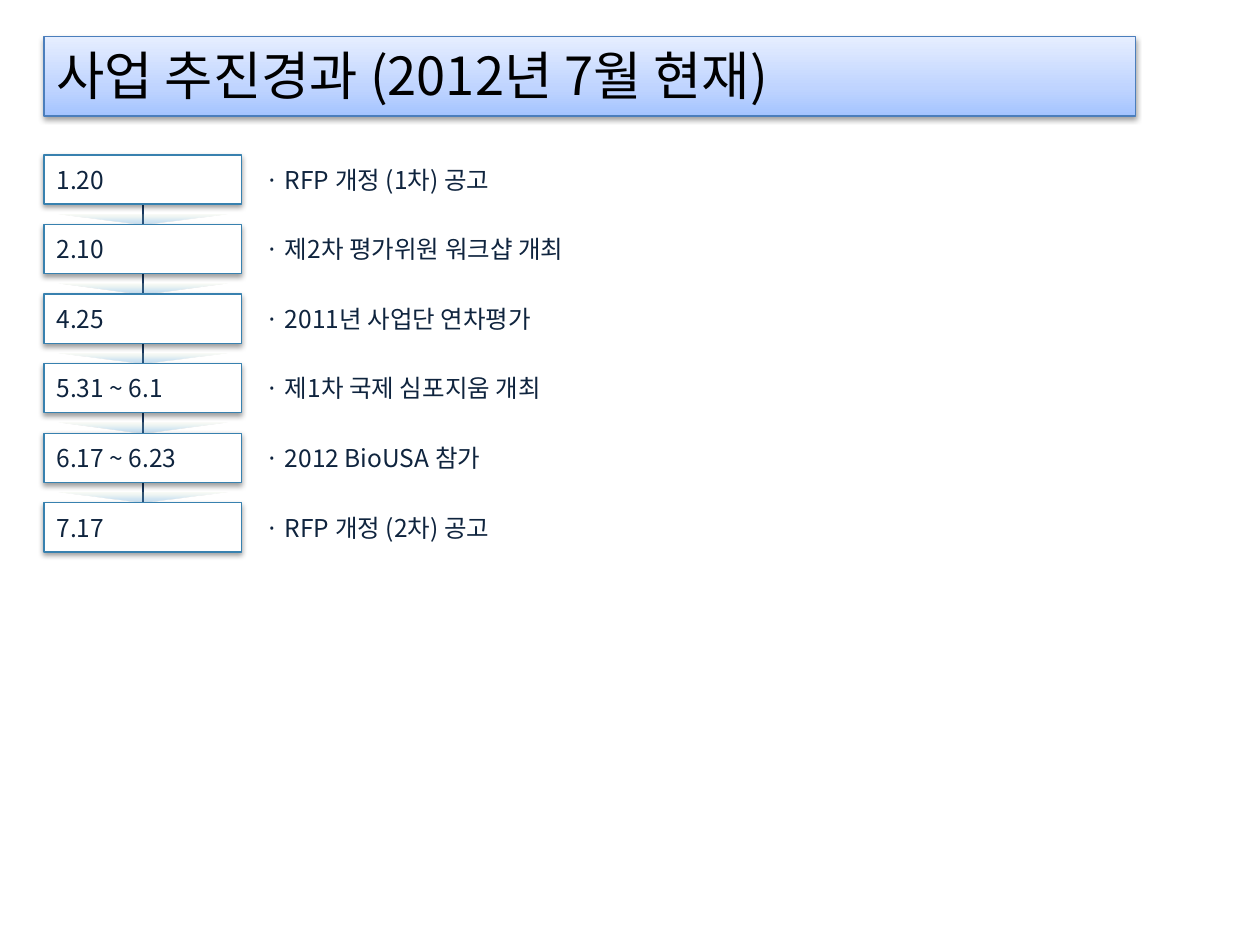
from typing import NamedTuple

import lxml.etree
import pptx
import pptx.dml.color
import pptx.enum.shapes
import pptx.enum.text
import pptx.oxml
import pptx.oxml.ns
import pptx.util

Inches = pptx.util.Inches
Shape = pptx.enum.shapes.MSO_SHAPE
Anchor = pptx.enum.text.MSO_ANCHOR
qn = pptx.oxml.ns.qn

FONT = "Noto Sans CJK KR"
COLORS = {
    "title": "000000",
    "text": "0F243E",
    "box": "FFFFFF",
    "box_line": "3881AF",
    "title_line": "4B7EBC",
    "spine": "17375E",
    "shadow": "000000",
}


class Stop(NamedTuple):
    pos: int
    color: str
    alpha: int = 100


class Step(NamedTuple):
    date: str
    event: str


TITLE_STOPS = [Stop(0, "A4C4FF"), Stop(35, "BFD4FF"), Stop(100, "E6EEFF")]
ARROW_STOPS = [Stop(38, "5EA6D3", 29), Stop(100, "D7E4BD", 14)]

STEPS = [
    Step("1.20", "· RFP 개정 (1차) 공고"),
    Step("2.10", "· 제2차 평가위원 워크샵 개최"),
    Step("4.25", "· 2011년 사업단 연차평가"),
    Step("5.31 ~ 6.1", "· 제1차 국제 심포지움 개최"),
    Step("6.17 ~ 6.23", "· 2012 BioUSA 참가"),
    Step("7.17", "· RFP 개정 (2차) 공고"),
]

# Timeline grid, in inches
LEFT, TOP, BOX_W, BOX_H = 0.35, 1.23, 1.57, 0.39
LAST_TOP = 3.99
PITCH = (LAST_TOP - TOP) / (len(STEPS) - 1)
CENTER = LEFT + BOX_W / 2
ARROW_W, ARROW_H = 1.34, 0.08
EVENT_LEFT, EVENT_W = 2.01, 7.56


def rgb(name: str) -> pptx.dml.color.RGBColor:
    return pptx.dml.color.RGBColor.from_string(COLORS[name])


def set_line(s, color: str) -> None:
    s.line.color.rgb = rgb(color)
    s.line.width = pptx.util.Pt(0.75)


def add_color(parent, color: str, alpha: int) -> None:
    clr = lxml.etree.SubElement(parent, qn("a:srgbClr"), val=color)
    if alpha < 100:
        lxml.etree.SubElement(clr, qn("a:alpha"), val=str(alpha * 1000))


def set_gradient(s, stops: list[Stop]) -> None:
    """Fill with a gradient that runs from bottom to top."""
    s.fill.background()
    ns = pptx.oxml.ns.nsdecls("a")
    grad = pptx.oxml.parse_xml(f'<a:gradFill {ns} rotWithShape="1"/>')
    gs_list = lxml.etree.SubElement(grad, qn("a:gsLst"))
    for stop in stops:
        gs = lxml.etree.SubElement(gs_list, qn("a:gs"), pos=str(stop.pos * 1000))
        add_color(gs, stop.color, stop.alpha)
    lxml.etree.SubElement(grad, qn("a:lin"), ang=str(270 * 60000), scaled="0")
    sp_pr = s._element.spPr
    sp_pr.replace(sp_pr.find(qn("a:noFill")), grad)


def set_shadow(s) -> None:
    s.shadow.inherit = False
    effects = s._element.spPr.find(qn("a:effectLst"))
    shadow = lxml.etree.SubElement(
        effects, qn("a:outerShdw"), blurRad="40000", dist="20000",
        dir=str(90 * 60000), rotWithShape="0")
    add_color(shadow, COLORS["shadow"], 38)


def set_text(s, text: str, size: int, color: str, anchor: Anchor) -> None:
    tf = s.text_frame
    tf.word_wrap = True
    tf.auto_size = pptx.enum.text.MSO_AUTO_SIZE.NONE
    tf.vertical_anchor = anchor
    p = tf.paragraphs[0]
    p.alignment = pptx.enum.text.PP_ALIGN.LEFT
    r = p.add_run()
    r.text = text
    r.font.size = pptx.util.Pt(size)
    r.font.color.rgb = rgb(color)
    r.font.name = FONT
    lxml.etree.SubElement(r._r.get_or_add_rPr(), qn("a:ea"), typeface=FONT)


def add_title(slide, text: str) -> None:
    s = slide.shapes.title
    s.left, s.top = Inches(LEFT), Inches(0.29)
    s.width, s.height = Inches(8.66), Inches(0.63)
    set_gradient(s, TITLE_STOPS)
    set_line(s, "title_line")
    set_shadow(s)
    set_text(s, text, 30, "title", Anchor.TOP)


def add_spine(slide) -> None:
    line = slide.shapes.add_connector(
        pptx.enum.shapes.MSO_CONNECTOR.STRAIGHT,
        Inches(CENTER), Inches(TOP), Inches(CENTER), Inches(LAST_TOP + BOX_H))
    set_line(line, "spine")
    lxml.etree.SubElement(line._element.spPr, qn("a:effectLst"))


def add_arrow(slide, bottom: float) -> None:
    s = slide.shapes.add_shape(
        Shape.DOWN_ARROW, Inches(CENTER - ARROW_W / 2), Inches(bottom - ARROW_H),
        Inches(ARROW_W), Inches(ARROW_H))
    s.adjustments[0] = 0.347
    s.adjustments[1] = 1
    set_gradient(s, ARROW_STOPS)
    s.line.fill.background()
    s.shadow.inherit = False


def add_step(slide, step: Step, top: float) -> None:
    box = slide.shapes.add_shape(
        Shape.RECTANGLE, Inches(LEFT), Inches(top), Inches(BOX_W), Inches(BOX_H))
    box.fill.solid()
    box.fill.fore_color.rgb = rgb("box")
    set_line(box, "box_line")
    set_shadow(box)
    set_text(box, step.date, 14, "text", Anchor.MIDDLE)

    event = slide.shapes.add_textbox(
        Inches(EVENT_LEFT), Inches(top), Inches(EVENT_W), Inches(BOX_H))
    set_text(event, step.event, 14, "text", Anchor.MIDDLE)


def main() -> None:
    prs = pptx.Presentation()
    prs.slide_width, prs.slide_height = Inches(10), Inches(7.5)
    slide = prs.slides.add_slide(prs.slide_layouts[5])

    add_title(slide, "사업 추진경과 (2012년 7월 현재)")

    # Timeline: spine behind, then an arrow into each later step
    add_spine(slide)
    for i, step in enumerate(STEPS):
        top = TOP + i * PITCH
        if i:
            add_arrow(slide, top)
        add_step(slide, step, top)

    prs.save("out.pptx")


if __name__ == "__main__":
    main()
